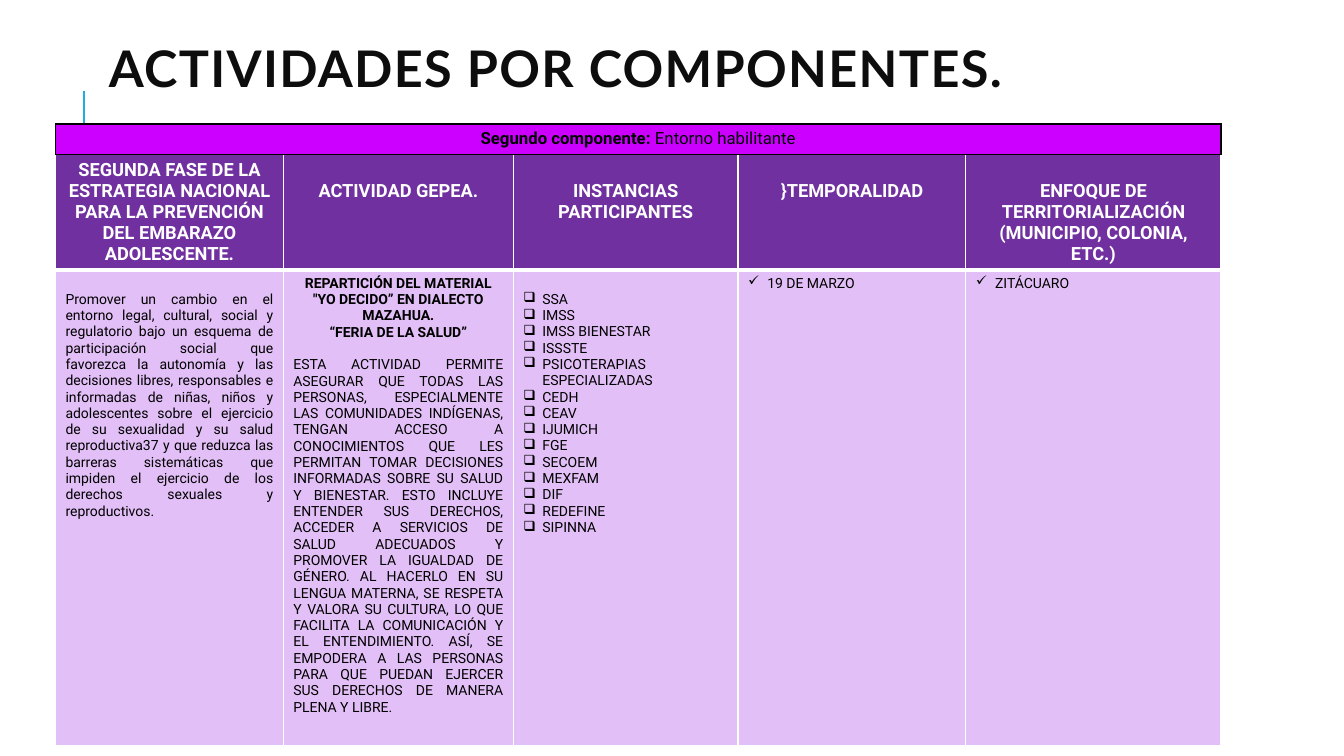
import pptx
import pptx.dml.color
import pptx.enum.shapes
import pptx.enum.text
import pptx.oxml.ns
import pptx.util
from lxml import etree

Inches = pptx.util.Inches
Pt = pptx.util.Pt
qn = pptx.oxml.ns.qn
Align = pptx.enum.text.PP_ALIGN
Anchor = pptx.enum.text.MSO_ANCHOR


def color(value):
    return pptx.dml.color.RGBColor.from_string(value)


def write(paragraph, text, size=10, font="Roboto", ink="000000", bold=False,
          align=None, bullet=None, before=None, spacing=None, tracking=None):
    if align is not None:
        paragraph.alignment = align
    if before:
        paragraph.space_before = Pt(before)
    if spacing:
        paragraph.line_spacing = spacing
    if bullet:
        properties = paragraph._p.get_or_add_pPr()
        properties.set("marL", str(Inches(0.19)))
        properties.set("indent", str(Inches(-0.19)))
        etree.SubElement(properties, qn("a:buChar")).set("char", bullet)
    run = paragraph.add_run()
    run.text = text
    run.font.size = Pt(size)
    run.font.name = font
    run.font.bold = bold
    run.font.color.rgb = color(ink)
    if tracking:
        run._r.get_or_add_rPr().set("spc", str(tracking * 100))


class ComponentSlide:
    HEADER = "7030A0"
    BODY = "E3BFF7"
    BANNER = "CC00FF"
    ACCENT = "1CADE4"

    def __init__(self, presentation):
        self.slide = presentation.slides.add_slide(presentation.slide_layouts[5])

    def title(self, text):
        shape = self.slide.shapes.title
        shape.left, shape.top = Inches(0.98), Inches(0)
        shape.width, shape.height = Inches(11.5), Inches(1.45)
        shape.text_frame.vertical_anchor = Anchor.MIDDLE
        write(shape.text_frame.paragraphs[0], text, size=36, font="Lato", ink="0D0D0D",
              bold=True, align=Align.LEFT, spacing=0.8, tracking=1)

    def line(self, x, top, bottom):
        connector = self.slide.shapes.add_connector(
            pptx.enum.shapes.MSO_CONNECTOR.STRAIGHT,
            Inches(x), Inches(top), Inches(x), Inches(bottom))
        connector.line.color.rgb = color(self.ACCENT)
        connector.line.width = Pt(1.5)
        etree.SubElement(connector._element.spPr, qn("a:effectLst"))

    def table(self, top, widths, heights):
        frame = self.slide.shapes.add_table(
            len(heights), len(widths), Inches(0.55), Inches(top),
            Inches(sum(widths)), Inches(sum(heights)))
        table = frame.table
        table.first_row = table.horz_banding = False
        for column, width in zip(table.columns, widths):
            column.width = Inches(width)
        for row, height in zip(table.rows, heights):
            row.height = Inches(height)
        return table

    def cell(self, cell, fill, paragraphs, border="FFFFFF", top_width=1, bottom_width=1,
             margin_top=0.05):
        properties = cell._tc.get_or_add_tcPr()
        for side, width in zip("LRTB", (1, 1, top_width, bottom_width)):
            edge = etree.SubElement(properties, qn("a:ln" + side))
            edge.set("w", str(Pt(width)))
            solid = etree.SubElement(edge, qn("a:solidFill"))
            etree.SubElement(solid, qn("a:srgbClr")).set("val", border)
        cell.fill.solid()
        cell.fill.fore_color.rgb = color(fill)
        cell.margin_top = Inches(margin_top)
        frame = cell.text_frame
        for index, (text, style) in enumerate(paragraphs):
            paragraph = frame.add_paragraph() if index else frame.paragraphs[0]
            write(paragraph, text, **style)


HEADINGS = [
    "SEGUNDA FASE DE LA ESTRATEGIA NACIONAL PARA LA PREVENCIÓN DEL EMBARAZO ADOLESCENTE.",
    "ACTIVIDAD GEPEA.",
    "INSTANCIAS PARTICIPANTES",
    "}TEMPORALIDAD",
    "ENFOQUE DE TERRITORIALIZACIÓN (MUNICIPIO, COLONIA, ETC.)",
]
STRATEGY = (
    "Promover un cambio en el entorno legal, cultural, social y regulatorio bajo un esquema "
    "de participación social que favorezca la autonomía y las decisiones libres, responsables "
    "e informadas de niñas, niños y adolescentes sobre el ejercicio de su sexualidad y su "
    "salud reproductiva37 y que reduzca las barreras sistemáticas que impiden el ejercicio "
    "de los derechos sexuales y reproductivos.")
ACTIVITY = (
    "ESTA ACTIVIDAD PERMITE ASEGURAR QUE TODAS LAS PERSONAS, ESPECIALMENTE LAS COMUNIDADES "
    "INDÍGENAS, TENGAN ACCESO A CONOCIMIENTOS QUE LES PERMITAN TOMAR DECISIONES INFORMADAS "
    "SOBRE SU SALUD Y BIENESTAR. ESTO INCLUYE ENTENDER SUS DERECHOS, ACCEDER A SERVICIOS DE "
    "SALUD ADECUADOS Y PROMOVER LA IGUALDAD DE GÉNERO. AL HACERLO EN SU LENGUA MATERNA, SE "
    "RESPETA Y VALORA SU CULTURA, LO QUE FACILITA LA COMUNICACIÓN Y EL ENTENDIMIENTO. ASÍ, SE "
    "EMPODERA A LAS PERSONAS PARA QUE PUEDAN EJERCER SUS DERECHOS DE MANERA PLENA Y LIBRE.")
PARTICIPANTS = [
    "SSA", "IMSS", "IMSS BIENESTAR", "ISSSTE", "PSICOTERAPIAS ESPECIALIZADAS", "CEDH", "CEAV",
    "IJUMICH", "FGE", "SECOEM", "MEXFAM", "DIF", "REDEFINE", "SIPINNA",
]


def main():
    presentation = pptx.Presentation()
    presentation.slide_width = Inches(13.33)
    presentation.slide_height = Inches(7.5)
    page = ComponentSlide(presentation)

    page.line(0.83, 0.9, 1.9)
    page.title("ACTIVIDADES POR COMPONENTES.")

    heading = dict(size=13, ink="FFFFFF", bold=True, align=Align.CENTER)
    subtitle = dict(bold=True, align=Align.CENTER)
    justified = dict(align=Align.JUSTIFY)
    box = dict(justified, bullet="❑")
    check = dict(justified, bullet="✓")
    contents = [
        (0.21, [(STRATEGY, justified)]),
        (0.05, [("REPARTICIÓN DEL MATERIAL \"YO DECIDO” EN DIALECTO MAZAHUA.", subtitle),
                ("“FERIA DE LA SALUD”", subtitle),
                (ACTIVITY, dict(justified, before=11.7))]),
        (0.21, [(name, box) for name in PARTICIPANTS]),
        (0.05, [("19 DE MARZO", check)]),
        (0.05, [("ZITÁCUARO", check)]),
    ]
    activities = page.table(1.53, [2.26, 2.28, 2.23, 2.26, 2.53], [1.09, 4.72])
    for column, (text, (margin, paragraphs)) in enumerate(zip(HEADINGS, contents)):
        page.cell(activities.cell(0, column), page.HEADER, [(text, heading)],
                  bottom_width=3, margin_top=0.26 if column else 0.05)
        page.cell(activities.cell(1, column), page.BODY, paragraphs,
                  top_width=3, margin_top=margin)

    banner = page.table(1.23, [11.56], [0.3]).cell(0, 0)
    page.cell(banner, page.BANNER,
              [("Segundo componente: ", dict(size=12, bold=True, align=Align.CENTER))],
              border="000000")
    write(banner.text_frame.paragraphs[0], "Entorno habilitante", size=12)

    presentation.save("out.pptx")


if __name__ == "__main__":
    main()
